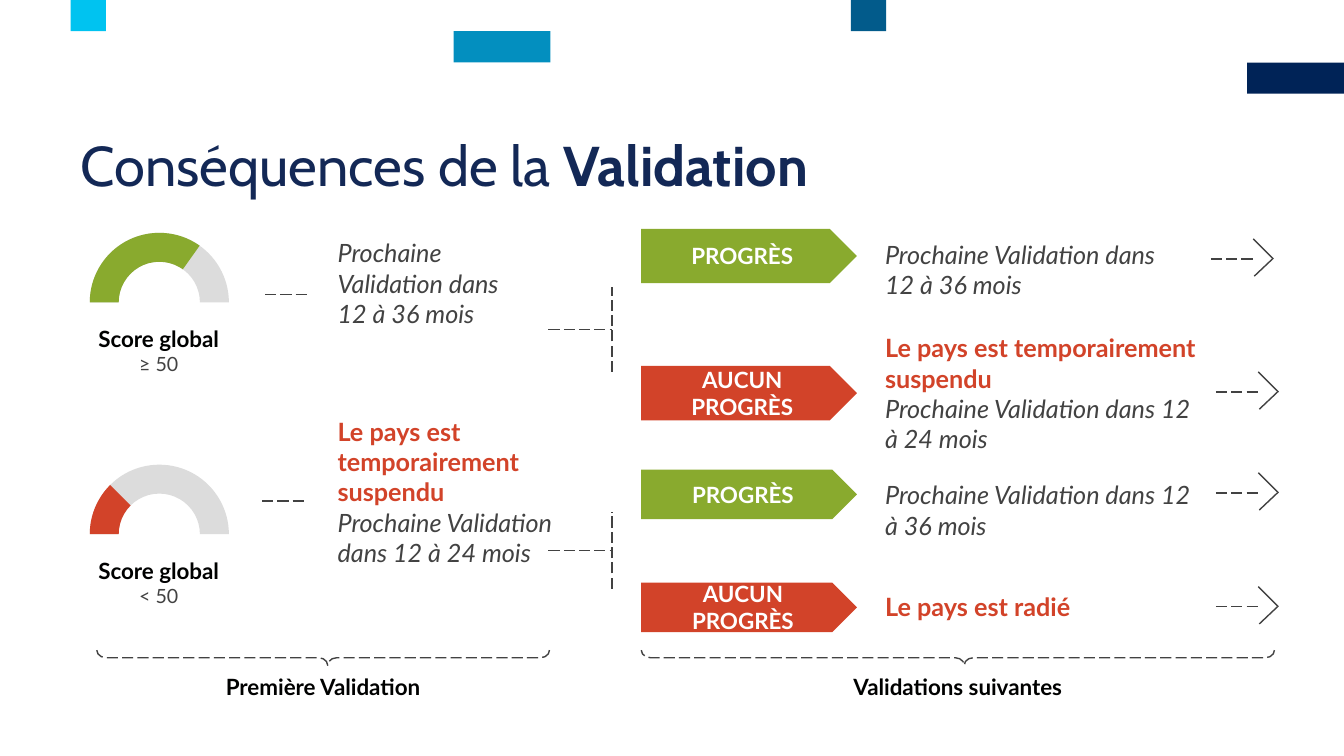
from pptx import Presentation
from pptx.dml.color import RGBColor
from pptx.enum.dml import MSO_LINE as Dash
from pptx.enum.shapes import MSO_CONNECTOR as Link, MSO_SHAPE as Form
from pptx.enum.text import MSO_ANCHOR as Anchor, MSO_AUTO_SIZE as Fit, PP_ALIGN as Align
from pptx.oxml.ns import qn
from pptx.util import Inches, Pt
from lxml.etree import SubElement

HUES = {
    "navy": "002357", "sea": "025B8B", "blue": "038FBF", "sky": "00C3F0",
    "title": "132856", "black": "000100", "ink": "424242", "grey": "DCDCDC",
    "green": "89AA2E", "red": "D24329", "white": "FFFFFF",
}
COLS, ROWS = 133.3, 75
STYLES = {
    "label": (16, "black", True, False),
    "score": (14, "ink", False, False),
    "plate": (16, "white", True, False),
    "alert": (18, "red", True, False),
    "next": (18, "ink", False, True),
}
HALT = ("Le pays est temporairement suspendu", "alert")
LONG = ("Prochaine Validation dans 12 à 36 mois", "next")
SHORT = ("Prochaine Validation dans 12 à 24 mois", "next")


def grid(*cells):
    """Turn grid columns and rows, ten to the inch, into lengths."""
    return [Inches(cell / 10) for cell in cells]


def hue(name):
    """Look up a colour."""
    return RGBColor.from_string(HUES[name])


def dress(font, style):
    """Apply a named text style to a font."""
    size, tint, font.bold, font.italic = STYLES[style]
    font.size = Pt(size)
    font.color.rgb = hue(tint)


def write(frame, parts, align):
    """Fill a frame with styled parts, one line break between them."""
    frame.word_wrap = True
    para = frame.paragraphs[0]
    para.alignment = align
    para.font.name = "Lato"
    if len(parts) == 1:
        dress(para.font, parts[0][1])
    for i, (words, style) in enumerate(parts):
        if i:
            para.add_line_break()
        run = para.add_run()
        run.text = words
        if len(parts) > 1:
            dress(run.font, style)


def text(slide, box, parts, align=Align.LEFT):
    """Place a text box."""
    frame = slide.shapes.add_textbox(*grid(*box)).text_frame
    frame.auto_size = Fit.SHAPE_TO_FIT_TEXT
    write(frame, parts, align)


def block(slide, form, box, tint):
    """Place a filled shape without outline."""
    shape = slide.shapes.add_shape(form, *grid(*box))
    shape.shadow.inherit = False
    shape.fill.solid()
    shape.fill.fore_color.rgb = hue(tint)
    shape.line.fill.background()
    return shape


def stroke(line, dash):
    """Style a line or outline."""
    line.color.rgb = hue("ink")
    line.width = Pt(1)
    if dash:
        line.dash_style = Dash.LONG_DASH


def rule(slide, ends, dash=True):
    """Draw a straight line between two points."""
    link = slide.shapes.add_connector(Link.STRAIGHT, *grid(*ends))
    stroke(link.line, dash)
    SubElement(link._element.spPr, qn("a:effectLst"))


def ribbon(slide):
    """Place the blocks along the top, each row lower than the last."""
    high = 3.1
    for x, row, wide, tint in (
        (123.7, 2, 9.6, "navy"), (84.4, 0, 3.5, "sea"),
        (45, 1, 9.6, "blue"), (7, 0, 3.5, "sky"),
    ):
        block(slide, Form.RECTANGLE, (x, row * high, wide, high), tint)


def title(slide, box):
    """Fill the title placeholder."""
    head = slide.shapes.title
    head.left, head.top, head.width, head.height = grid(*box)
    frame = head.text_frame
    frame.vertical_anchor = Anchor.MIDDLE
    para = frame.paragraphs[0]
    para.alignment = Align.LEFT
    para.line_spacing = 0.89
    para.font.name = "Cabin"
    para.font.size = Pt(40)
    para.font.color.rgb = hue("title")
    for words, bold in (("Conséquences de la ", False), ("Validation", True)):
        run = para.add_run()
        run.text = words
        run.font.bold = bold


def gauge(slide, x, y, end, tint, score):
    """Draw a half-ring dial filled up to an end angle, with its label."""
    for stop, shade in ((360, "grey"), (end, tint)):
        arc = block(slide, Form.BLOCK_ARC, (x + 0.6, y, 13.8, 13.8), shade)
        for i, value in enumerate((108, stop % 360 * 0.6, 0.208)):
            arc.adjustments[i] = value
    parts = [("Score global", "label"), (score, "score")]
    text(slide, (x, y + 8.7, 14.9, 6.1), parts, Align.CENTER)


def fork(slide, x, y, half):
    """Draw the dashed branch that leads to two outcomes."""
    rule(slide, (x, y, x + 6.3, y))
    rule(slide, (x + 6.3, y + half, x + 6.3, y - half))


def arrow(slide, x, y):
    """Draw a dashed shaft with an open head."""
    rule(slide, (x, y, x + 4.4, y))
    rule(slide, (x + 4.3, y + 1.7, x + 6.1, y), False)
    rule(slide, (x + 4.2, y - 2, x + 6.2, y), False)


def outcome(slide, box, good, note, parts, tip):
    """Place a plate, its consequence and the arrow onward."""
    x, y, wide, high = box
    plate = block(slide, Form.PENTAGON, box, "green" if good else "red")
    plate.text_frame.vertical_anchor = Anchor.MIDDLE
    words = "PROGRÈS" if good else "AUCUN PROGRÈS"
    write(plate.text_frame, [(words, "plate")], Align.CENTER)
    drop, span, tall = note
    text(slide, (x + wide + 1.8, y + drop, span, tall), parts)
    arrow(slide, *tip)


def brace(slide, x, y, wide, words):
    """Draw a dashed brace opening upward, with a caption below."""
    deep = 1.5
    box = (x + (wide - deep) / 2, y - (wide - deep) / 2, deep, wide)
    shape = slide.shapes.add_shape(Form.RIGHT_BRACE, *grid(*box))
    shape.rotation = 90
    shape.adjustments[0], shape.adjustments[1] = 0.6, 0.49
    shape.shadow.inherit = False
    shape.fill.background()
    stroke(shape.line, True)
    text(slide, (x, y + 1.8, wide, 3.7), [(words, "label")], Align.CENTER)


def first(slide, x):
    """Build the half for the first validation."""
    gauge(slide, x, 23.1, 305.4, "green", "≥ 50")
    gauge(slide, x, 46.1, 225.1, "red", "< 50")
    rule(slide, (x + 18, 29.2, x + 22.4, 29.2))
    rule(slide, (x + 17.7, 49.7, x + 22.1, 49.7))
    text(slide, (x + 24.2, 23.1, 20.2, 13.1), [LONG])
    text(slide, (x + 24.2, 40.8, 25, 16.2), [HALT, SHORT])
    fork(slide, x + 46.1, 32.7, 4.2)
    fork(slide, x + 46.1, 54.6, 3.8)
    brace(slide, x + 1.3, 64.5, 44.9, "Première Validation")


def later(slide, x):
    """Build the half for the validations that follow."""
    tip = x + 57
    for y, high, good, note, parts, end in (
        (22.7, 5.4, True, (0.5, 31.7, 7.1), [LONG], (tip - 0.5, 25.7)),
        (36.3, 5.4, False, (-3.8, 34.1, 13.1), [HALT, SHORT], (tip, 38.9)),
        (46.6, 4.9, True, (0.5, 34.1, 7.1), [LONG], (tip, 48.9)),
        (57.8, 4.9, False, (0.4, 34.1, 4), [("Le pays est radié", "alert")], (tip, 60.2)),
    ):
        outcome(slide, (x, y, 21.4, high), good, note, parts, end)
    brace(slide, x, 64.5, 62.8, "Validations suivantes")


def main():
    """Build and save the slide."""
    deck = Presentation()
    deck.slide_width, deck.slide_height = grid(COLS, ROWS)
    slide = deck.slides.add_slide(deck.slide_layouts[5])
    ribbon(slide)
    title(slide, (7, 13.1, 119.3, 7.3))
    first(slide, 8.3)
    later(slide, 63.6)
    deck.save("out.pptx")


if __name__ == "__main__":
    main()
